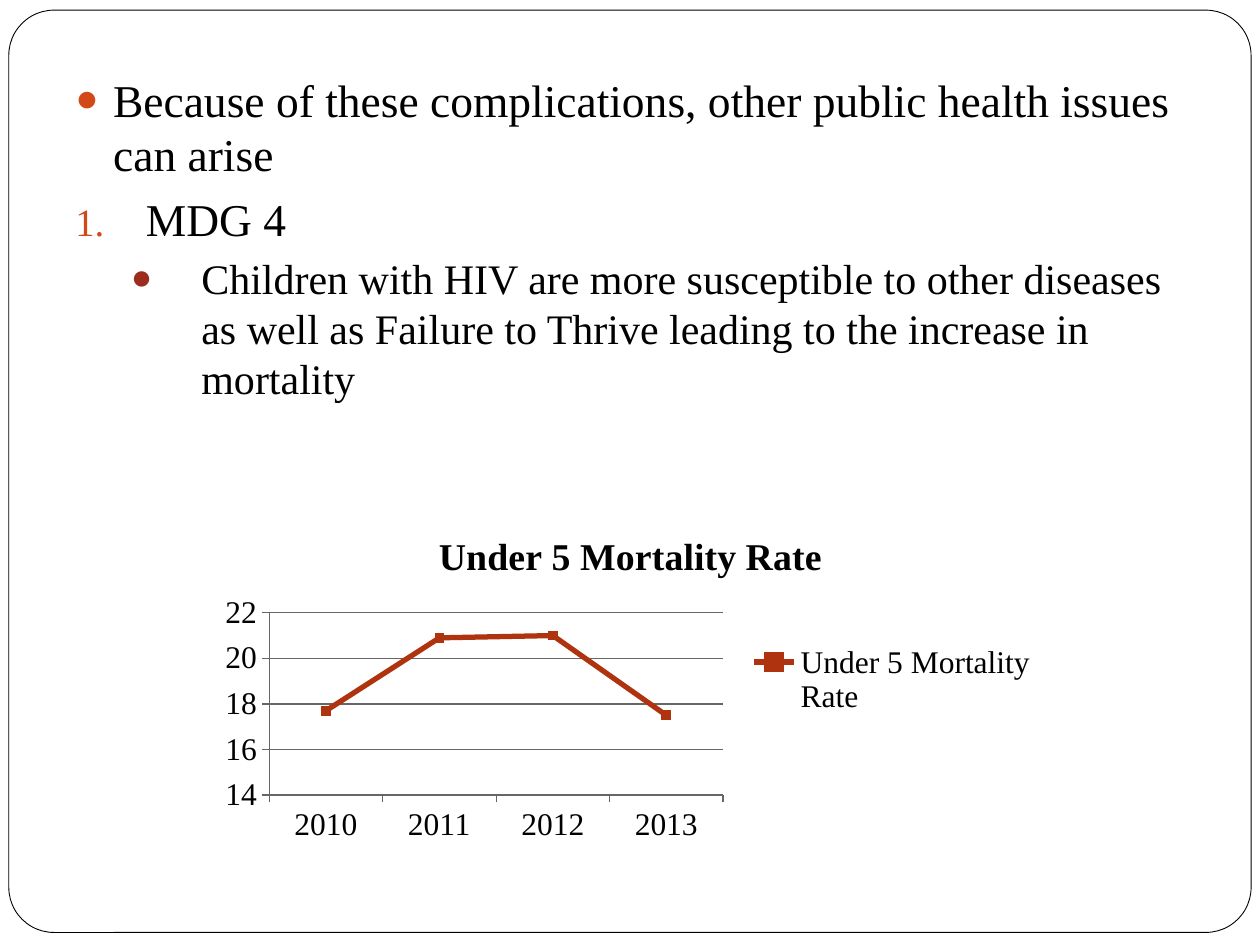
from dataclasses import dataclass
from lxml.etree import SubElement, fromstring
from pptx import Presentation
from pptx.chart.data import CategoryChartData
from pptx.dml.color import RGBColor
from pptx.enum.chart import XL_CHART_TYPE, XL_LEGEND_POSITION, XL_MARKER_STYLE, XL_TICK_MARK
from pptx.enum.shapes import MSO_SHAPE
from pptx.oxml.ns import qn
from pptx.util import Inches, Pt


@dataclass(frozen=True)
class Theme:
    font: str = "Times New Roman"
    ink: str = "000000"
    paper: str = "FFFFFF"
    grid: str = "666666"
    first: str = "D34817"
    second: str = "9B2D1F"
    series: str = "B0330F"
    lead: float = 26
    sub: float = 24
    label: float = 18
    title: float = 21.6


T = Theme()
WIDTH, HEIGHT = Inches(10), Inches(7.5)
NAME = "Under 5 Mortality Rate"
RATES = {"2010": 17.7, "2011": 20.9, "2012": 21, "2013": 17.5}


def share(left, top, width, height):
    """Turn percentages of the slide into a box."""
    return [int(side * part / 100) for side, part in
            zip((WIDTH, HEIGHT, WIDTH, HEIGHT), (left, top, width, height))]


def style(font, size, bold=False):
    font.name, font.size, font.bold = T.font, Pt(size), bold
    font.color.rgb = RGBColor.from_string(T.ink)


def stroke(line, color, width):
    line.color.rgb = RGBColor.from_string(color)
    line.width = Pt(width)


def write(para, text, size=T.lead, level=0, margin=0.3, hang=0.3,
          before=5.8, color=T.first, number=False):
    """Fill one paragraph with a bullet or a number."""
    run = para.add_run()
    run.text = text
    style(run.font, size)
    para.level, para.space_before = level, Pt(before)
    props = para._p.get_or_add_pPr()
    props.set("marL", str(Inches(margin)))
    props.set("indent", str(-Inches(hang)))
    tint = SubElement(props, qn("a:buClr"))
    SubElement(tint, qn("a:srgbClr"), val=color)
    SubElement(props, qn("a:buSzPct"), val="85000")
    SubElement(props, qn("a:buFont"), typeface=T.font)
    if number:
        SubElement(props, qn("a:buAutoNum"), type="arabicPeriod")
    else:
        SubElement(props, qn("a:buChar"), char="●")


def frame(slide, box):
    card = slide.shapes.add_shape(MSO_SHAPE.ROUNDED_RECTANGLE, *box)
    card.shadow.inherit = False
    card.adjustments[0] = 0.049
    card.fill.solid()
    card.fill.fore_color.rgb = RGBColor.from_string(T.paper)
    stroke(card.line, T.ink, 0.5)


def points(slide, box):
    body = slide.shapes.add_textbox(*box).text_frame
    body.word_wrap = True
    write(body.paragraphs[0],
          "Because of these complications, other public health issues can arise")
    write(body.add_paragraph(), "MDG 4", margin=0.56, hang=0.56, number=True)
    write(body.add_paragraph(),
          "Children with HIV are more susceptible to other diseases as well as "
          "Failure to Thrive leading to the increase in mortality",
          size=T.sub, level=1, margin=1, hang=0.56, before=3.7, color=T.second)


def place(plot, **shares):
    """Pin the inner plot area to shares of the chart's box."""
    space = "http://schemas.openxmlformats.org/drawingml/2006/chart"
    marks = '<c:layoutTarget val="inner"/><c:xMode val="edge"/><c:yMode val="edge"/>'
    marks += "".join(f'<c:{key} val="{val}"/>' for key, val in shares.items())
    for old in plot.findall(qn("c:layout")):
        plot.remove(old)
    plot.insert(0, fromstring(f'<c:layout xmlns:c="{space}"><c:manualLayout>{marks}'
                              '</c:manualLayout></c:layout>'))


def trend(slide, box):
    data = CategoryChartData()
    data.categories = list(RATES)
    data.add_series(NAME, list(RATES.values()))
    chart = slide.shapes.add_chart(XL_CHART_TYPE.LINE_MARKERS, *box, data).chart
    style(chart.font, T.label)

    # Title and legend
    chart.has_title = True
    head = chart.chart_title.text_frame
    head.text = NAME
    style(head.paragraphs[0].runs[0].font, T.title, bold=True)
    chart.has_legend = True
    chart.legend.position = XL_LEGEND_POSITION.RIGHT
    chart.legend.include_in_layout = False

    # Axes
    rate = chart.value_axis
    rate.minimum_scale, rate.maximum_scale, rate.major_unit = 14, 22, 2
    rate.has_major_gridlines = True
    stroke(rate.major_gridlines.format.line, T.grid, 0.75)
    for axis in (chart.category_axis, rate):
        axis.major_tick_mark = XL_TICK_MARK.OUTSIDE
        stroke(axis.format.line, T.grid, 0.75)

    # Line with square markers
    chart.plots[0].vary_by_categories = False
    line = chart.plots[0].series[0]
    line.smooth = False
    stroke(line.format.line, T.series, 3)
    mark = line.marker
    mark.style, mark.size = XL_MARKER_STYLE.SQUARE, 5
    mark.format.fill.solid()
    mark.format.fill.fore_color.rgb = RGBColor.from_string(T.series)
    stroke(mark.format.line, T.series, 0.75)
    place(chart._chartSpace.chart.plotArea, x=0.07, y=0.3, w=0.54, h=0.54)


def main():
    deck = Presentation()
    deck.slide_width, deck.slide_height = WIDTH, HEIGHT
    slide = deck.slides.add_slide(deck.slide_layouts[6])
    frame(slide, share(0.7, 1.07, 98.6, 97.6))
    points(slide, share(5, 6.93, 90, 82.4))
    trend(slide, share(16.7, 54.13, 66.7, 35.73))
    deck.save("out.pptx")


if __name__ == "__main__":
    main()
